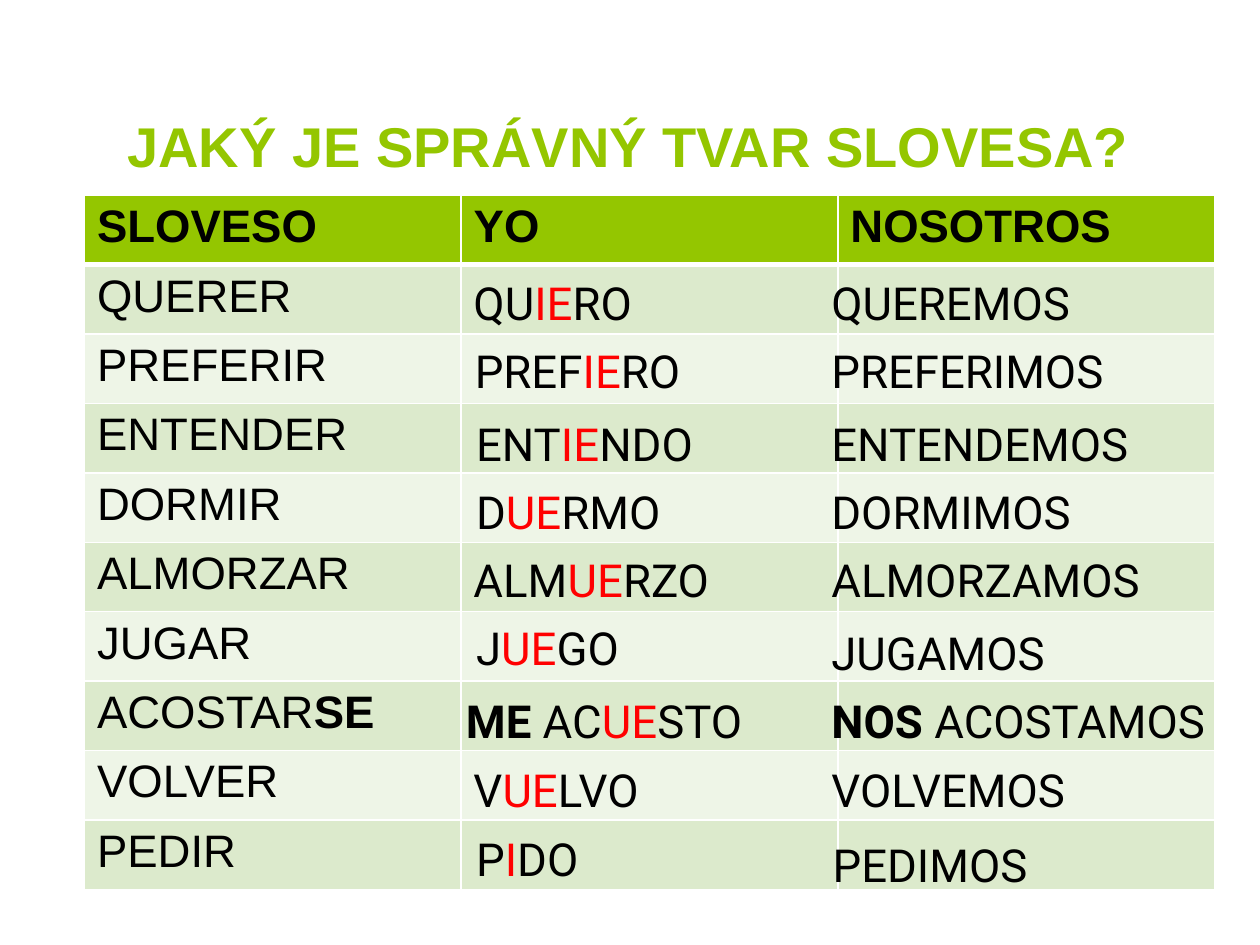
from pptx import Presentation
from pptx.dml.color import RGBColor as RGB
from pptx.enum.text import MSO_ANCHOR as Anchor, MSO_AUTO_SIZE as AutoSize, PP_ALIGN as Align
from pptx.oxml.ns import qn
from pptx.util import Inches, Pt
from lxml.etree import SubElement

COLORS = {"green": "94C600", "black": "000000", "red": "FF0000",
          "white": "FFFFFF", "band1": "DCEACC", "band2": "EEF5E7"}
HEADER = ["SLOVESO", "YO", "NOSOTROS"]

# Verb, top of its answers, then (left, top shift, width, text) for each answer.
# "|" separates runs, "!" starts a red run and "*" a bold one.
VERBS = [
    ("QUERER", 21.3, (36.6, 0, 24.4, "QU|!IE|RO"), (65, 0, 26, "QUEREMOS")),
    ("PREFERIR", 26.7, (36.7, 0, 19.7, "PREF|!IE|RO"), (65, 0, 26, "PREFERIMOS")),
    ("ENTENDER", 32.5, (36.8, 0, 19.7, "ENT|!IE|NDO"), (65, 0, 27.6, "ENTENDEMOS")),
    ("DORMIR", 37.9, (36.8, 0, 19.7, "D|!UE|RMO"), (65, 0, 29.1, "DORMIMOS")),
    ("ALMORZAR", 43.3, (36.6, 0, 24.4, "ALM|!UE|RZO"), (65, 0, 27.6, "ALMORZAMOS")),
    ("JUGAR", 48.7, (36.8, 0, 24.4, "J|!UE|GO"), (65, 0.4, 27.8, "JUGAMOS")),
    ("ACOSTAR|*SE", 54.5, (36, 0, 27.4, "*ME| AC|!UE|STO"), (65, 0, 33.1, "*NOS| ACOSTAMOS")),
    ("VOLVER", 60, (36.6, 0, 24.4, "V|!UE|LVO"), (65, 0, 29.1, "VOLVEMOS")),
    ("PEDIR", 65.5, (36.8, 0, 26.6, "P|!I|DO"), (65.1, 0.4, 27.8, "PEDIMOS")),
]


def write(tf, text, font="Arial", size=26, color="black", bold=False):
    p = tf.paragraphs[0]
    p.alignment = Align.LEFT
    for part in text.split("|"):
        r = p.add_run()
        r.text = part.lstrip("!*")
        r.font.name, r.font.size = font, Pt(size)
        r.font.bold = bold or part.startswith("*")
        r.font.color.rgb = RGB.from_string(COLORS["red" if part.startswith("!") else color])


class Deck:
    """Slide on a grid of 100 columns and 75 rows."""

    def __init__(self):
        self.prs = Presentation()
        self.prs.slide_width, self.prs.slide_height = Inches(10), Inches(7.5)
        self.s = self.prs.slides.add_slide(self.prs.slide_layouts[5])

    def box(self, left, top, width, height):
        col, row = self.prs.slide_width / 100, self.prs.slide_height / 75
        return [int(left * col), int(top * row), int(width * col), int(height * row)]

    def title(self, text, *at):
        sp = self.s.shapes.title
        sp.left, sp.top, sp.width, sp.height = self.box(*at)
        tf = sp.text_frame
        tf.auto_size, tf.vertical_anchor = AutoSize.NONE, Anchor.BOTTOM
        write(tf, text, size=32, color="green", bold=True)

    def text(self, text, *at):
        tf = self.s.shapes.add_textbox(*self.box(*at)).text_frame
        tf.word_wrap, tf.auto_size = True, AutoSize.SHAPE_TO_FIT_TEXT
        write(tf, text, font="Roboto")

    def cell(self, cell, text, fill, bold=False, **borders):
        tcPr = cell._tc.get_or_add_tcPr()
        for side in "LRTB":
            ln = SubElement(tcPr, qn(f"a:ln{side}"), w=str(Pt(borders.get(side, 1))))
            SubElement(SubElement(ln, qn("a:solidFill")), qn("a:srgbClr"), val=COLORS["white"])
        cell.fill.solid()
        cell.fill.fore_color.rgb = RGB.from_string(COLORS[fill])
        write(cell.text_frame, text, bold=bold)

    def table(self, header, first_column, *at):
        table = self.s.shapes.add_table(len(first_column) + 1, len(header), *self.box(*at)).table
        for c, name in enumerate(header):
            self.cell(table.cell(0, c), name, "green", bold=True, B=3)
            for r, verb in enumerate(first_column, 1):
                self.cell(table.cell(r, c), "" if c else verb,
                          "band1" if r % 2 else "band2", T=3 if r == 1 else 1)


def main():
    deck = Deck()
    deck.title("JAKÝ JE SPRÁVNÝ TVAR SLOVESA?", 9.1, 7.6, 82.7, 7.1)
    # Verbs in the first column, the other cells left open
    deck.table(HEADER, [verb for verb, *_ in VERBS], 6.7, 15.5, 89.7, 55.1)
    # Answers laid over the open cells
    for _, top, *answers in VERBS:
        for left, shift, width, text in answers:
            deck.text(text, left, top + shift, width, 5.4)
    deck.prs.save("out.pptx")


if __name__ == "__main__":
    main()
